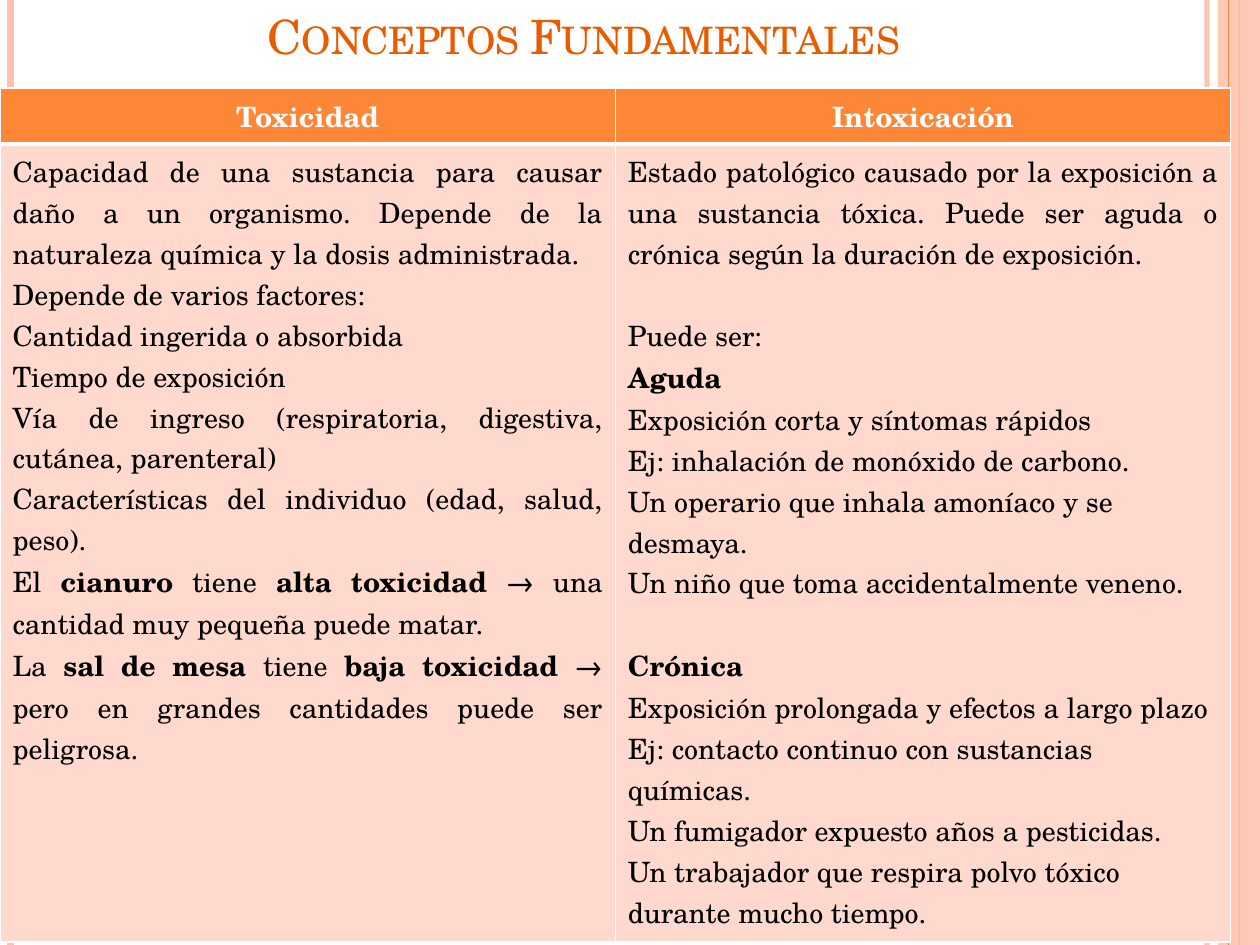
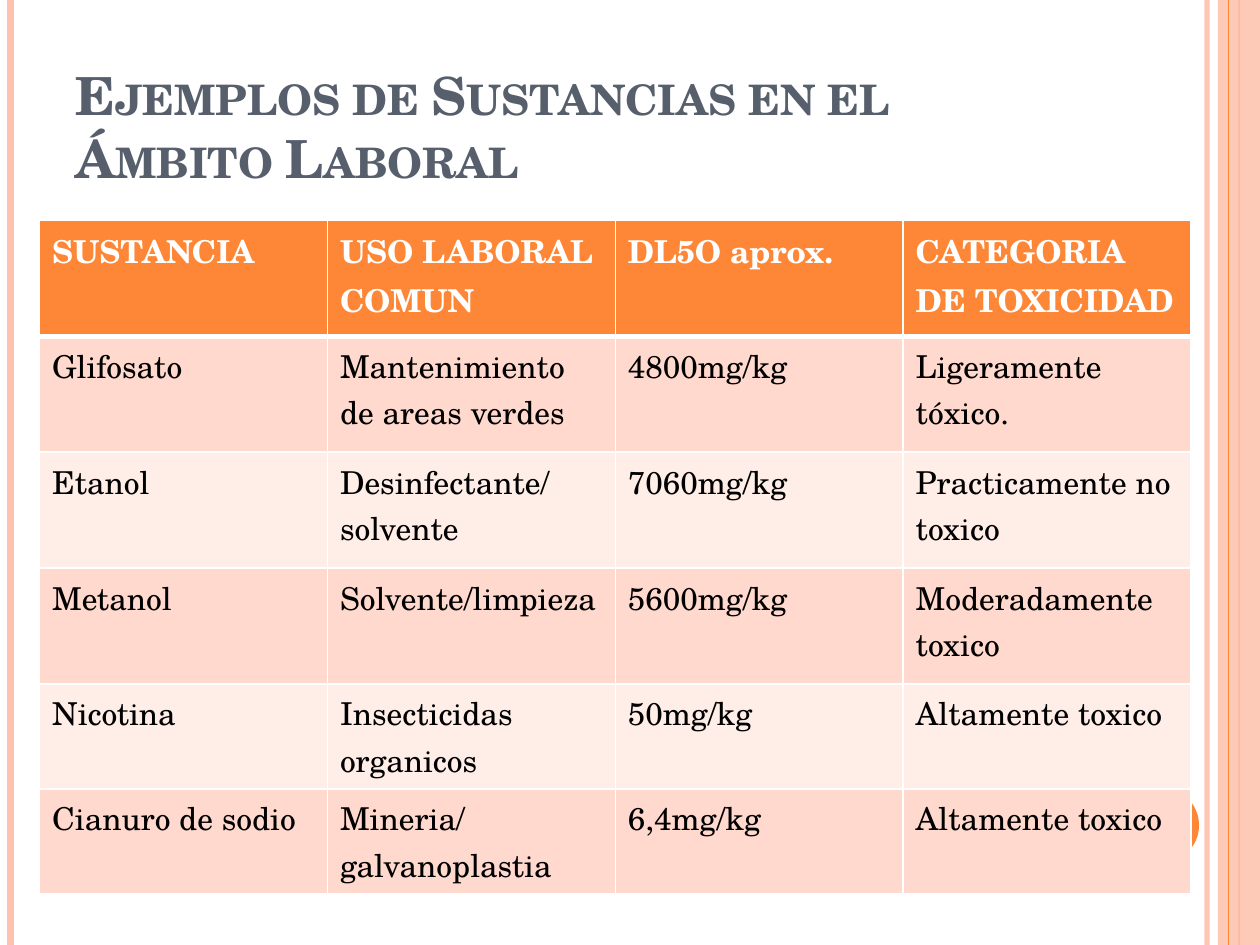
from dataclasses import dataclass

from lxml.etree import SubElement
from pptx import Presentation
from pptx.dml.color import RGBColor
from pptx.enum.shapes import MSO_CONNECTOR, MSO_SHAPE
from pptx.enum.text import MSO_ANCHOR, PP_ALIGN
from pptx.oxml.ns import qn
from pptx.presentation import Presentation as Deck
from pptx.slide import Slide
from pptx.table import _Cell as Cell
from pptx.text.text import TextFrame
from pptx.util import Pt

WIDTH, HEIGHT = 720, 540
FONT = "TeX Gyre Schola"
ORANGE = RGBColor(0xFE, 0x86, 0x37)
DARK_ORANGE = RGBColor(0xE7, 0x5C, 0x01)
PEACH = RGBColor(0xFE, 0xC3, 0xAE)
SLATE = RGBColor(0x57, 0x5F, 0x6D)
WHITE = RGBColor(0xFF, 0xFF, 0xFF)
BLACK = RGBColor(0, 0, 0)
ROW_FILLS = (RGBColor(0xFF, 0xD9, 0xCE), RGBColor(0xFF, 0xED, 0xE8))
THIN, THICK = 1, 3


@dataclass(frozen=True)
class Stripe:
    x: float
    weight: float
    color: RGBColor
    alpha: int = 100


@dataclass(frozen=True)
class Title:
    text: str
    box: tuple[float, float, float, float]
    size: float
    color: RGBColor
    bold: bool = False
    align: PP_ALIGN = PP_ALIGN.LEFT


@dataclass(frozen=True)
class Para:
    """A paragraph whose text between double asterisks is bold."""
    text: str
    align: PP_ALIGN = PP_ALIGN.LEFT
    before: float = 0


@dataclass(frozen=True)
class Grid:
    left: float
    top: float
    col_width: float
    row_heights: tuple[float, ...]
    size: float
    header: list[Para]
    body: list[list[list[Para]]]


STRIPES_BELOW = (
    Stripe(689.75, 3, PEACH, 93),
    Stripe(6, 4.5, PEACH),
    Stripe(708, 1.5, ORANGE),
)
STRIPE_ABOVE = Stripe(702, 0.75, ORANGE)
BAND_LEFT = 696

CONCEPTS_TITLE = Title("Conceptos Fundamentales", (39.6, 0, 588.24, 40.3),
                       27, DARK_ORANGE, align=PP_ALIGN.CENTER)
EXAMPLES_TITLE = Title("Ejemplos de Sustancias en el Ámbito Laboral",
                       (36, 21.6, 588.24, 90), 30, SLATE, bold=True)

LINE_GAP = 23.4
TOXICITY = [Para(text, PP_ALIGN.JUSTIFY) for text in (
    "Capacidad de una sustancia para causar daño a un organismo. "
    "Depende de la naturaleza química y la dosis administrada.",
    "Depende de varios factores:",
    "Cantidad ingerida o absorbida",
    "Tiempo de exposición",
    "Vía de ingreso (respiratoria, digestiva, cutánea, parenteral)",
    "Características del individuo (edad, salud, peso).",
    "El **cianuro** tiene **alta toxicidad** → una cantidad muy pequeña puede matar.",
    "La **sal de mesa** tiene **baja toxicidad** → "
    "pero en grandes cantidades puede ser peligrosa.",
)]
INTOXICATION = [
    Para("Estado patológico causado por la exposición a una sustancia tóxica. "
         "Puede ser aguda o crónica según la duración de exposición.",
         PP_ALIGN.JUSTIFY),
    Para("Puede ser:", before=LINE_GAP),
    Para("**Aguda**"),
    Para("Exposición corta y síntomas rápidos"),
    Para("Ej: inhalación de monóxido de carbono."),
    Para("Un operario que inhala amoníaco y se desmaya."),
    Para("Un niño que toma accidentalmente veneno."),
    Para("**Crónica**", before=LINE_GAP),
    Para("Exposición prolongada y efectos a largo plazo"),
    Para("Ej: contacto continuo con sustancias químicas."),
    Para("Un fumigador expuesto años a pesticidas."),
    Para("Un trabajador que respira polvo tóxico durante mucho tiempo."),
]
CONCEPTS = Grid(
    0, 50.4, 351.6, (32, 456), 16,
    [Para(f"**{name}**", PP_ALIGN.CENTER) for name in ("Toxicidad", "Intoxicación")],
    [[TOXICITY, INTOXICATION]],
)

SUBSTANCES = (
    ("Glifosato", "Mantenimiento de areas verdes", "4800mg/kg", "Ligeramente tóxico."),
    ("Etanol", "Desinfectante/solvente", "7060mg/kg", "Practicamente no toxico"),
    ("Metanol", "Solvente/limpieza", "5600mg/kg", "Moderadamente toxico"),
    ("Nicotina", "Insecticidas organicos", "50mg/kg", "Altamente toxico"),
    ("Cianuro de sodio", "Mineria/ galvanoplastia", "6,4mg/kg", "Altamente toxico"),
)
EXAMPLES = Grid(
    22.6, 126, 164.5, (66.2,) * 4 + (60,) * 2, 18,
    [Para(f"**{name}**") for name in (
        "SUSTANCIA", "USO LABORAL COMUN", "DL5O aprox.", "CATEGORIA DE TOXICIDAD")],
    [[[Para(value)] for value in row] for row in SUBSTANCES],
)


def set_alpha(sp_pr, percent: int) -> None:
    """Make the first solid colour under a shape's properties translucent."""
    color = next(sp_pr.iter(qn("a:srgbClr")))
    SubElement(color, qn("a:alpha"), val=str(percent * 1000))


def add_stripe(slide: Slide, stripe: Stripe) -> None:
    x = Pt(stripe.x)
    line = slide.shapes.add_connector(MSO_CONNECTOR.STRAIGHT, x, 0, x, Pt(HEIGHT))
    line.line.color.rgb = stripe.color
    line.line.width = Pt(stripe.weight)
    sp_pr = line._element.spPr
    if stripe.alpha < 100:
        set_alpha(sp_pr, stripe.alpha)
    SubElement(sp_pr, qn("a:effectLst"))


def add_fill_shape(slide: Slide, kind: MSO_SHAPE, box: tuple[float, ...],
                   color: RGBColor, alpha: int = 100) -> None:
    sp = slide.shapes.add_shape(kind, *map(Pt, box))
    sp.shadow.inherit = False
    sp.fill.solid()
    sp.fill.fore_color.rgb = color
    sp.line.fill.background()
    if alpha < 100:
        set_alpha(sp._element.spPr, alpha)


def add_frame(slide: Slide) -> None:
    """Draw the vertical stripes and the right band that every slide has."""
    for stripe in STRIPES_BELOW:
        add_stripe(slide, stripe)
    add_fill_shape(slide, MSO_SHAPE.RECTANGLE,
                   (BAND_LEFT, 0, WIDTH - BAND_LEFT, HEIGHT), PEACH, 87)
    add_stripe(slide, STRIPE_ABOVE)


def add_title(slide: Slide, title: Title) -> None:
    tf = slide.shapes.add_textbox(*map(Pt, title.box)).text_frame
    tf.word_wrap = True
    tf.vertical_anchor = MSO_ANCHOR.BOTTOM
    p = tf.paragraphs[0]
    p.alignment = title.align
    r = p.add_run()
    r.text = title.text
    r.font.name = FONT
    r.font.size = Pt(title.size)
    r.font.bold = title.bold
    r.font.color.rgb = title.color
    r._r.get_or_add_rPr().set("cap", "small")


def write_paras(tf: TextFrame, paras: list[Para], size: float, color: RGBColor) -> None:
    for i, para in enumerate(paras):
        p = tf.add_paragraph() if i else tf.paragraphs[0]
        p.alignment = para.align
        if para.before:
            p.space_before = Pt(para.before)
        for j, text in enumerate(para.text.split("**")):
            if not text:
                continue
            r = p.add_run()
            r.text = text
            r.font.name = FONT
            r.font.size = Pt(size)
            r.font.bold = j % 2 == 1
            r.font.color.rgb = color


def style_cell(cell: Cell, fill: RGBColor, top: float, bottom: float) -> None:
    tc_pr = cell._tc.get_or_add_tcPr()
    for side, weight in (("L", THIN), ("R", THIN), ("T", top), ("B", bottom)):
        ln = SubElement(tc_pr, qn(f"a:ln{side}"), w=str(Pt(weight)))
        solid = SubElement(ln, qn("a:solidFill"))
        SubElement(solid, qn("a:srgbClr"), val=str(WHITE))
    cell.fill.solid()
    cell.fill.fore_color.rgb = fill


def add_grid(slide: Slide, grid: Grid) -> None:
    rows, cols = len(grid.row_heights), len(grid.header)
    table = slide.shapes.add_table(
        rows, cols, Pt(grid.left), Pt(grid.top),
        Pt(grid.col_width * cols), Pt(sum(grid.row_heights))).table
    table.horz_banding = False
    for col in table.columns:
        col.width = Pt(grid.col_width)
    for row, height in zip(table.rows, grid.row_heights):
        row.height = Pt(height)
    for c, para in enumerate(grid.header):
        cell = table.cell(0, c)
        style_cell(cell, ORANGE, THIN, THICK)
        write_paras(cell.text_frame, [para], grid.size, WHITE)
    for i, row in enumerate(grid.body):
        for c, paras in enumerate(row):
            cell = table.cell(i + 1, c)
            style_cell(cell, ROW_FILLS[i % 2], THIN if i else THICK, THIN)
            write_paras(cell.text_frame, paras, grid.size, BLACK)


def new_slide(prs: Deck) -> Slide:
    slide = prs.slides.add_slide(prs.slide_layouts[6])
    add_frame(slide)
    return slide


def build_concepts(prs: Deck) -> None:
    slide = new_slide(prs)
    add_title(slide, CONCEPTS_TITLE)
    add_grid(slide, CONCEPTS)


def build_examples(prs: Deck) -> None:
    slide = new_slide(prs)
    add_fill_shape(slide, MSO_SHAPE.OVAL, (642, 450, 43.2, 43.2), ORANGE)
    add_title(slide, EXAMPLES_TITLE)
    add_grid(slide, EXAMPLES)


def main() -> None:
    prs = Presentation()
    prs.slide_width, prs.slide_height = Pt(WIDTH), Pt(HEIGHT)
    build_concepts(prs)
    build_examples(prs)
    prs.save("out.pptx")


if __name__ == "__main__":
    main()
